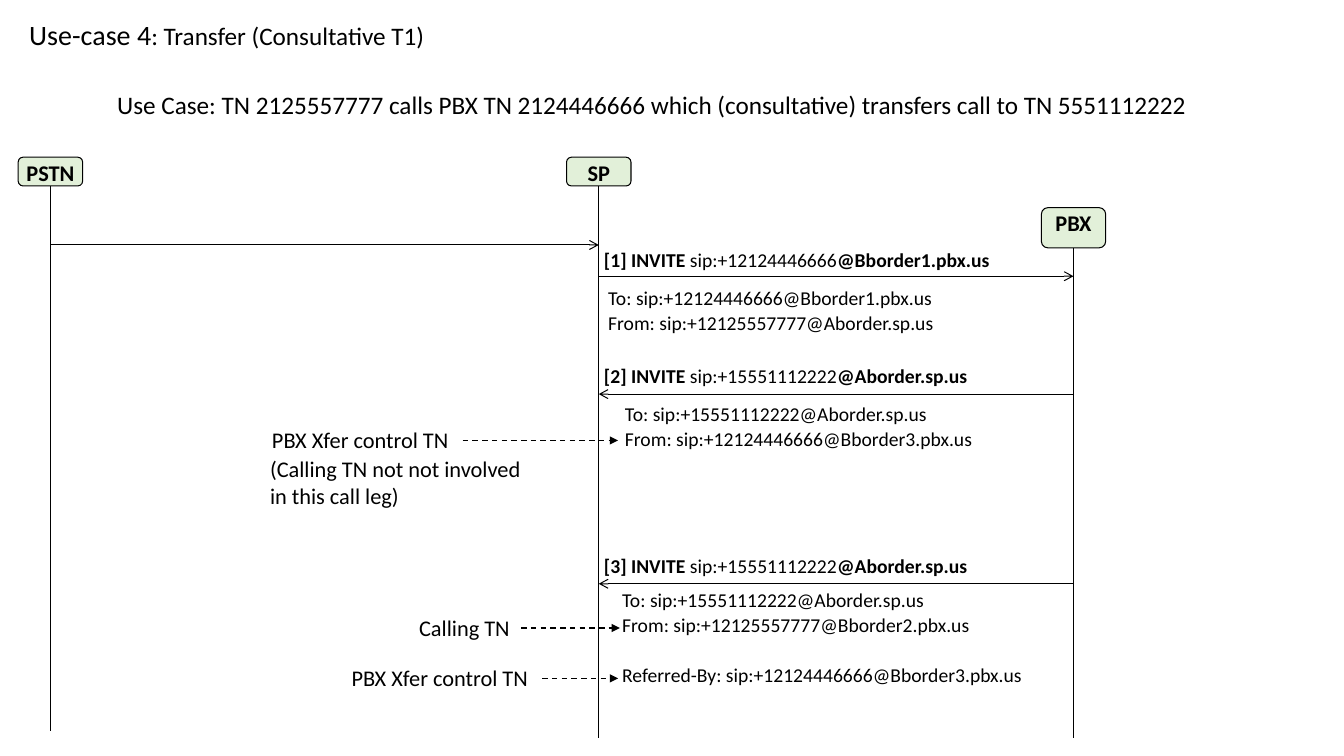
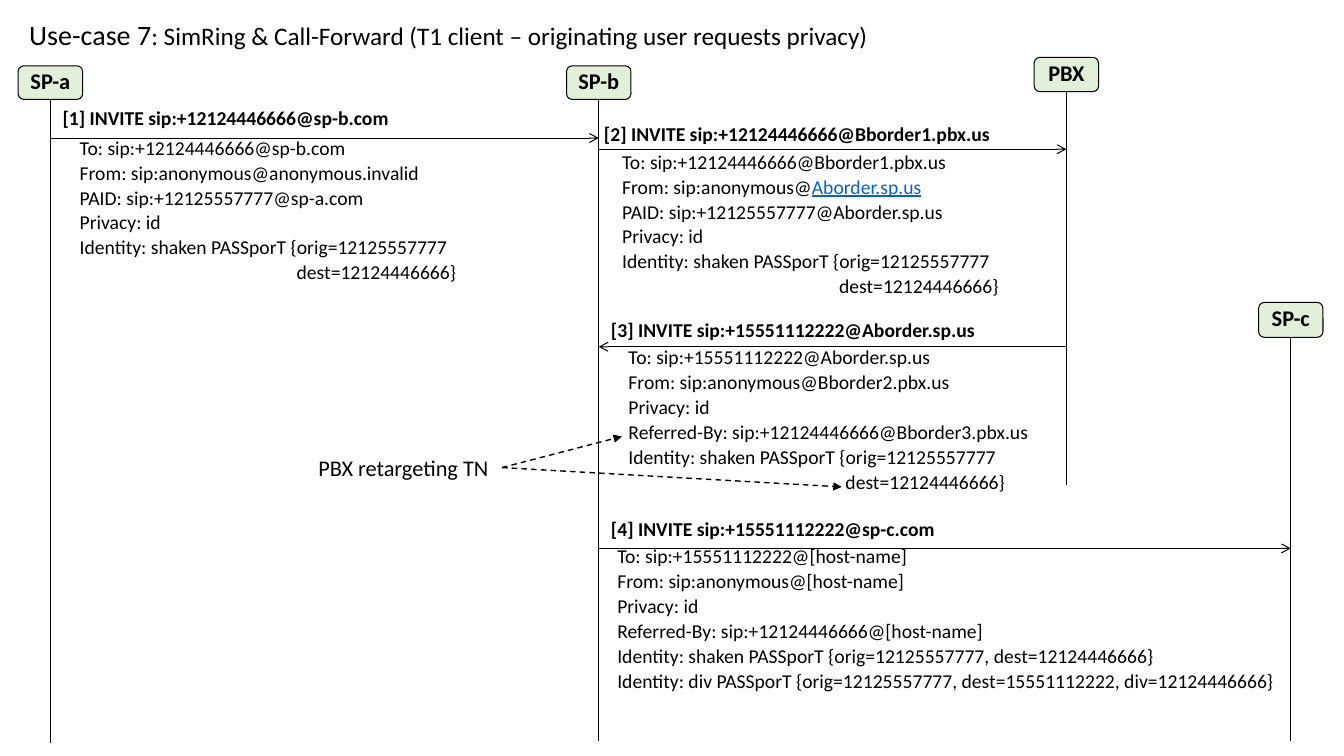
from dataclasses import dataclass

from lxml import etree
from pptx import Presentation
from pptx.dml.color import RGBColor
from pptx.enum.dml import MSO_LINE
from pptx.enum.shapes import MSO_CONNECTOR, MSO_SHAPE
from pptx.enum.text import MSO_ANCHOR, MSO_AUTO_SIZE, PP_ALIGN
from pptx.oxml.ns import qn
from pptx.util import Pt

DASH = MSO_LINE.DASH
STRAIGHT = MSO_CONNECTOR.STRAIGHT
ROUNDED = MSO_SHAPE.ROUNDED_RECTANGLE
TOP, MIDDLE = MSO_ANCHOR.TOP, MSO_ANCHOR.MIDDLE
GROW = MSO_AUTO_SIZE.SHAPE_TO_FIT_TEXT
LEFT, CENTER = PP_ALIGN.LEFT, PP_ALIGN.CENTER
TITLE_ONLY = 5


@dataclass(frozen=True)
class Theme:
    """Colours, font and sizes of the call-flow slides."""
    font: str = "Calibri"
    ink: str = "000000"
    actor_fill: str = "E2F0D9"
    link: str = "0563C1"
    title: float = 20
    subtitle: float = 18
    note: float = 16
    sip: float = 14
    line: float = 0.75
    pointer: float = 1
    line_spacing: float = 0.9
    header_gap: float = 2.7
    heading_gap: float = 8
    actor_width: float = 46


THEME = Theme()


def add_text(paragraph, text, size=THEME.sip, color=THEME.ink, bold=False, underline=False):
    """Append one formatted run to a paragraph."""
    run = paragraph.add_run()
    run.text = text
    font = run.font
    font.name, font.size = THEME.font, Pt(size)
    font.bold, font.underline = bold, underline
    font.color.rgb = RGBColor.from_string(color)


def add_spans(paragraph, spans, **style):
    """Append spans, each a string or a (string, overrides) pair."""
    for span in [spans] if isinstance(spans, str) else spans:
        text, changes = (span, {}) if isinstance(span, str) else span
        add_text(paragraph, text, **{**style, **changes})


class CallFlow:
    """Draws call-flow diagrams on the current slide, measured in points."""

    def __init__(self, theme):
        """Start a widescreen presentation."""
        self.theme = theme
        self.deck = Presentation()
        self.deck.slide_width, self.deck.slide_height = Pt(960), Pt(540)
        self.slide = None

    def new_slide(self, use_case, subject):
        """Open a slide with its two-size title."""
        self.slide = self.deck.slides.add_slide(self.deck.slide_layouts[TITLE_ONLY])
        title = self.slide.shapes.title
        title.left, title.top, title.width, title.height = Pt(13.7), Pt(0), Pt(926), Pt(52.5)
        frame = title.text_frame
        frame.vertical_anchor = MIDDLE
        paragraph = frame.paragraphs[0]
        paragraph.alignment, paragraph.line_spacing = LEFT, self.theme.line_spacing
        add_text(paragraph, use_case, size=self.theme.title)
        add_text(paragraph, subject, size=self.theme.subtitle)

    def line(self, start, end, head=None, dashed=False):
        """Draw a line with an optional arrowhead."""
        connector = self.slide.shapes.add_connector(STRAIGHT, *map(Pt, (*start, *end)))
        line = connector.line
        line.color.rgb = RGBColor.from_string(self.theme.ink)
        line.width = Pt(self.theme.pointer if dashed else self.theme.line)
        if dashed:
            line.dash_style = DASH
        properties = connector._element.spPr
        if head:
            etree.SubElement(properties.find(qn("a:ln")), qn("a:tailEnd"), type=head)
        etree.SubElement(properties, qn("a:effectLst"))

    def pointer(self, start, end):
        """Draw a dashed pointer from a note to a header."""
        self.line(start, end, head="triangle", dashed=True)

    def actor(self, name, axis, top, height, bottom):
        """Draw a named actor above its lifeline."""
        width = self.theme.actor_width
        chip = self.slide.shapes.add_shape(
            ROUNDED, Pt(axis - width / 2), Pt(top), Pt(width), Pt(height))
        chip.shadow.inherit = False
        chip.fill.solid()
        chip.fill.fore_color.rgb = RGBColor.from_string(self.theme.actor_fill)
        chip.line.color.rgb = RGBColor.from_string(self.theme.ink)
        chip.line.width = Pt(self.theme.line)
        frame = chip.text_frame
        frame.margin_left = frame.margin_right = frame.margin_top = frame.margin_bottom = 0
        frame.word_wrap, frame.vertical_anchor = False, TOP
        paragraph = frame.paragraphs[0]
        paragraph.alignment = CENTER
        add_text(paragraph, name, size=self.theme.note, bold=True)
        self.line((axis, top + height), (axis, bottom))

    def text_box(self, place, width, height, margins=(7.2, 3.6), wrap=True):
        """Add a growing text box and return its frame."""
        frame = self.slide.shapes.add_textbox(*map(Pt, (*place, width, height))).text_frame
        frame.word_wrap, frame.auto_size = wrap, GROW
        frame.margin_left = frame.margin_right = Pt(margins[0])
        frame.margin_top = frame.margin_bottom = Pt(margins[1])
        return frame

    def note(self, text, place, width, height=26.6, size=THEME.note, wrap=False):
        """Write a plain remark."""
        frame = self.text_box(place, width, height, wrap=wrap)
        add_text(frame.paragraphs[0], text, size=size)

    def heading(self, spans, place):
        """Write the bold request line of a message."""
        frame = self.text_box(place, 334, 25, margins=(9.4, 5))
        paragraph = frame.paragraphs[0]
        paragraph.line_spacing = self.theme.line_spacing
        paragraph.space_before = Pt(self.theme.heading_gap)
        add_spans(paragraph, spans, bold=True)

    def headers(self, lines, place, width=345, gaps=None, indents=None):
        """Write header lines, with extra gaps or indents by line number."""
        frame = self.text_box(place, width, 18 * len(lines), margins=(9.4, 0.7))
        for number, spans in enumerate(lines):
            paragraph = frame.paragraphs[0] if number == 0 else frame.add_paragraph()
            paragraph.line_spacing = self.theme.line_spacing
            paragraph.space_before = Pt((gaps or {}).get(number, self.theme.header_gap))
            if number in (indents or {}):
                paragraph._p.get_or_add_pPr().set("marL", str(Pt(indents[number])))
            add_spans(paragraph, spans)

    def message(self, start, end, y, heading, heading_at, lines, lines_at, **layout):
        """Draw a message arrow with its request line and headers."""
        self.line((start, y), (end, y), head="arrow")
        self.heading(heading, heading_at)
        self.headers(lines, lines_at, **layout)


def invite(number, user, host):
    """Return a request line whose user part is not bold."""
    return [f"[{number}] INVITE ", (f"sip:{user}", {"bold": False}), f"@{host}"]


def draw_transfer(flow):
    """Draw the consultative transfer."""
    pstn, provider, pbx = 36, 427.7, 766.8
    flow.new_slide("Use-case 4", ": Transfer (Consultative T1)")
    flow.note("Use Case: TN 2125557777 calls PBX TN 2124446666 which (consultative) "
              "transfers call to TN 5551112222", (76.6, 60), 783, 29, size=THEME.subtitle)
    flow.actor("PSTN", pstn, 112.3, 20.5, 522)
    flow.actor("SP", provider, 112.3, 20.5, 527)
    flow.actor("PBX", pbx, 148.3, 28.8, 527)
    flow.line((pstn, 175), (provider, 175), head="arrow")
    flow.message(provider, pbx, 197.3, invite(1, "+12124446666", "Bborder1.pbx.us"),
                 (422, 174.2),
                 ["To: sip:+12124446666@Bborder1.pbx.us",
                  "From: sip:+12125557777@Aborder.sp.us"], (425, 205.2))
    flow.message(pbx, provider, 281.5, invite(2, "+15551112222", "Aborder.sp.us"),
                 (422, 257),
                 ["To: sip:+15551112222@Aborder.sp.us",
                  "From: sip:+12124446666@Bborder3.pbx.us"], (437, 288))
    flow.message(pbx, provider, 417, invite(3, "+15551112222", "Aborder.sp.us"),
                 (422, 392.4),
                 ["To: sip:+15551112222@Aborder.sp.us",
                  "From: sip:+12125557777@Bborder2.pbx.us",
                  "Referred-By: sip:+12124446666@Bborder3.pbx.us"], (435, 421.2),
                 gaps={2: 20.8})
    flow.note("(Calling TN not not involved in this call leg)",
              (185.8, 321.8), 202, 46, wrap=True)
    control, caller = "PBX Xfer control TN", "Calling TN"
    for remark, left, top, width, tip in (
            (control, 187.2, 301, 143.3, 441.5),
            (caller, 292.3, 435, 80, 442.8),
            (control, 244, 471, 143.3, 441.5)):
        flow.note(remark, (left, top), width)
        flow.pointer((left + width, top + 13.6), (tip, top + 13.6))


def draw_forward(flow):
    """Draw simultaneous ringing and call forwarding with privacy."""
    caller, provider, pbx, target = 36, 427.7, 761.7, 922
    privacy = "Privacy: id"
    referral = "Referred-By: sip:+12124446666@"
    shaken = "Identity: shaken PASSporT {orig=12125557777"
    dest = "dest=12124446666}"
    dest_indent = {5: 155}
    flow.new_slide("Use-case 7",
                   ": SimRing & Call-Forward (T1 client – originating user requests privacy)")
    flow.actor("SP-a", caller, 47, 24, 531)
    flow.actor("SP-b", provider, 47, 24, 529)
    flow.actor("PBX", pbx, 41, 24.5, 346.3)
    flow.actor("SP-c", target, 216, 25, 529)
    flow.message(caller, provider, 98.6, "[1] INVITE sip:+12124446666@sp-b.com", (35.3, 72.7),
                 ["To: sip:+12124446666@sp-b.com",
                  "From: sip:anonymous@anonymous.invalid",
                  "PAID: sip:+12125557777@sp-a.com",
                  privacy, shaken, dest], (47.5, 98), indents=dest_indent)
    flow.message(provider, pbx, 106.6, "[2] INVITE sip:+12124446666@Bborder1.pbx.us",
                 (422, 84.2),
                 ["To: sip:+12124446666@Bborder1.pbx.us",
                  ["From: sip:anonymous@",
                   ("Aborder.sp.us", {"color": THEME.link, "underline": True})],
                  "PAID: sip:+12125557777@Aborder.sp.us",
                  privacy, shaken, dest], (435, 108), indents=dest_indent)
    flow.message(pbx, provider, 247.7, "[3] INVITE sip:+15551112222@Aborder.sp.us",
                 (427, 224),
                 ["To: sip:+15551112222@Aborder.sp.us",
                  "From: sip:anonymous@Bborder2.pbx.us",
                  privacy, referral + "Bborder3.pbx.us", shaken, dest], (439.5, 247.7),
                 indents=dest_indent)
    flow.message(provider, target, 391.7, "[4] INVITE sip:+15551112222@sp-c.com", (427, 365.8),
                 ["To: sip:+15551112222@[host-name]",
                  "From: sip:anonymous@[host-name]",
                  privacy, referral + "[host-name]", shaken + ", " + dest,
                  "Identity: div PASSporT {orig=12125557777, dest=15551112222, "
                  "div=12124446666}"], (431.5, 389.7), width=516)
    flow.note("PBX retargeting TN", (220.3, 321), 139)
    for tip in ((601.2, 347.8), (444.2, 311.8)):
        flow.pointer((358.6, 334), tip)


def main():
    """Build and save the presentation."""
    flow = CallFlow(THEME)
    draw_transfer(flow)
    draw_forward(flow)
    flow.deck.save("out.pptx")


if __name__ == "__main__":
    main()
